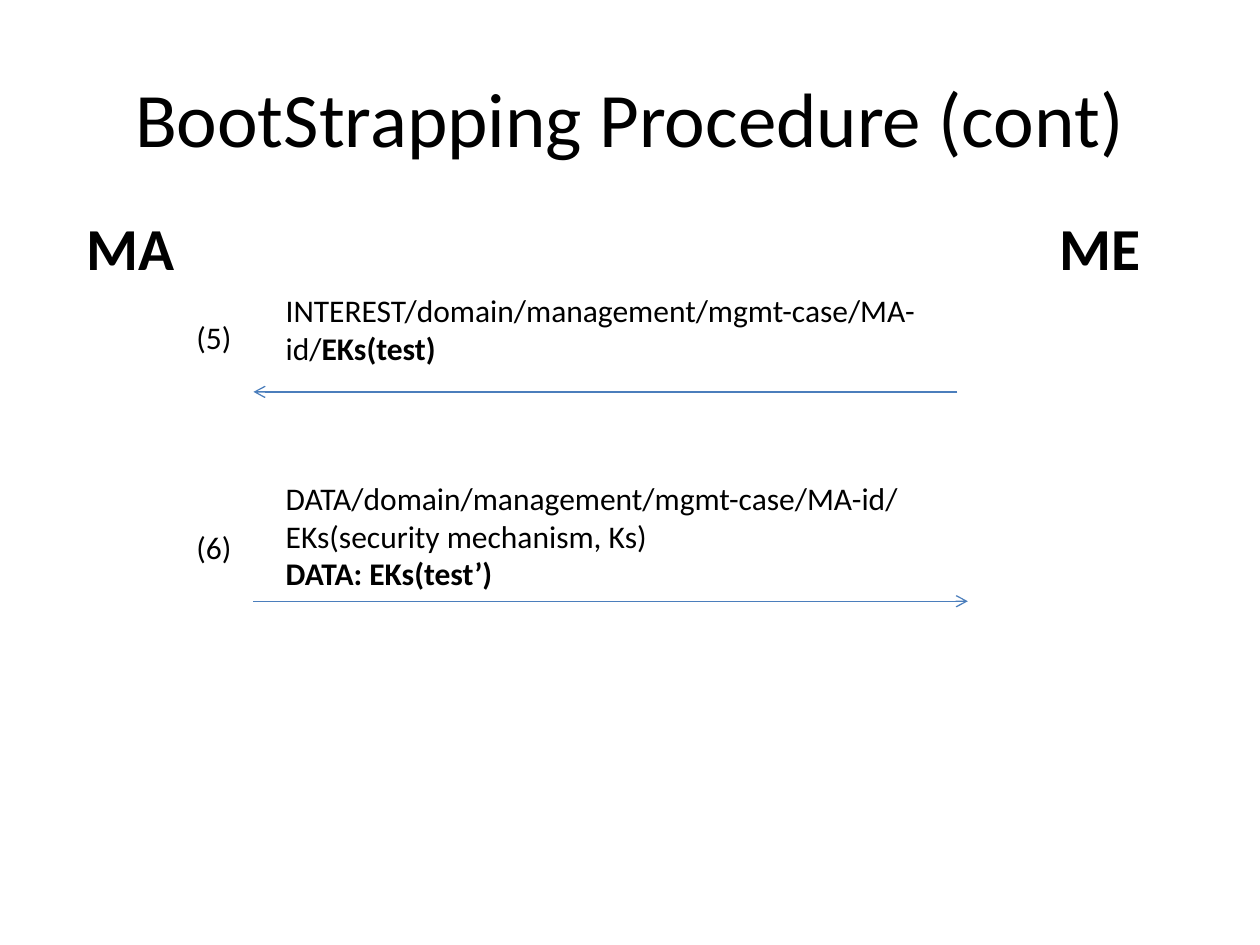
from dataclasses import dataclass

from lxml.etree import SubElement
from pptx import Presentation
from pptx.dml.color import RGBColor
from pptx.enum.shapes import MSO_CONNECTOR
from pptx.enum.text import MSO_ANCHOR, PP_ALIGN
from pptx.oxml.ns import qn
from pptx.util import Cm, Pt


@dataclass(frozen=True)
class Theme:
    font: str = "Calibri"
    ink: RGBColor = RGBColor(0x00, 0x00, 0x00)
    line: RGBColor = RGBColor(0x4B, 0x7E, 0xBC)
    rule: float = 0.75
    title: int = 44
    party: int = 34
    body: int = 18


THEME = Theme()
TITLE = "BootStrapping Procedure (cont)"
PARTIES = [("MA", 1.5), ("ME", 21.11)]
STEPS = [
    {
        "mark": "(5)",
        "text": [[("INTEREST/domain/management/mgmt-case/MA-id/", False),
                  ("EKs(test)", True)]],
        "box": (5.74, 14.0, 1.8),
        "ends": (19.3, 5.11),
        "rule": 7.9,
    },
    {
        "mark": "(6)",
        "text": [[("DATA/domain/management/mgmt-case/MA-id/EKs(security mechanism, Ks)", False)],
                 [("DATA: EKs(test’)", True)]],
        "box": (9.53, 15.4, 2.57),
        "ends": (5.11, 19.51),
        "rule": 12.12,
    },
]
MARK_X, TEXT_X, MARK_UP = 3.71, 5.51, 1.61


def add_text(slide, box, paras, size, align=PP_ALIGN.LEFT, anchor=MSO_ANCHOR.TOP):
    frame = slide.shapes.add_textbox(*map(Cm, box)).text_frame
    frame.word_wrap = True
    frame.vertical_anchor = anchor
    for num, runs in enumerate(paras):
        para = frame.add_paragraph() if num else frame.paragraphs[0]
        para.alignment = align
        for text, bold in runs:
            run = para.add_run()
            run.text = text
            font = run.font
            font.name, font.size, font.bold = THEME.font, Pt(size), bold
            font.color.rgb = THEME.ink


def add_arrow(slide, start, end, y):
    arrow = slide.shapes.add_connector(
        MSO_CONNECTOR.STRAIGHT, Cm(start), Cm(y), Cm(end), Cm(y))
    arrow.line.color.rgb = THEME.line
    arrow.line.width = Pt(THEME.rule)
    SubElement(arrow.line._get_or_add_ln(), qn("a:tailEnd"), type="arrow")
    SubElement(arrow._element.spPr, qn("a:effectLst"))


def main():
    """Build the slide of the message exchange between MA and ME."""
    deck = Presentation()
    deck.slide_width, deck.slide_height = Cm(25.4), Cm(19.05)
    slide = deck.slides.add_slide(deck.slide_layouts[6])
    add_text(slide, (1.27, 0.76, 22.86, 3.18), [[(TITLE, False)]],
             THEME.title, PP_ALIGN.CENTER, MSO_ANCHOR.MIDDLE)
    for name, x in PARTIES:
        add_text(slide, (x, 4.14, 2.39, 1.7), [[(name, True)]], THEME.party)
    for step in STEPS:
        top, width, height = step["box"]
        add_text(slide, (TEXT_X, top, width, height), step["text"], THEME.body)
        add_text(slide, (MARK_X, step["rule"] - MARK_UP, 2.79, 1.02),
                 [[(step["mark"], False)]], THEME.body)
        add_arrow(slide, *step["ends"], step["rule"])
    deck.save("out.pptx")


if __name__ == "__main__":
    main()
